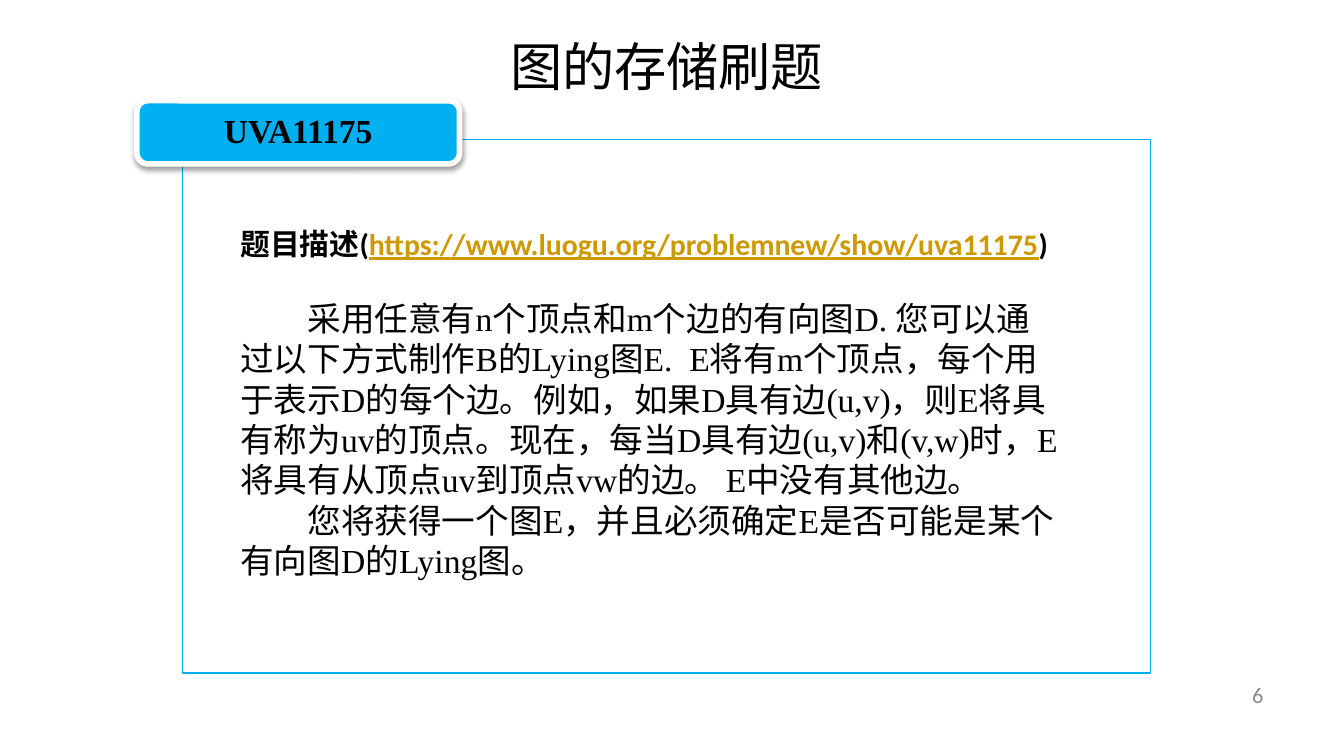
from pptx import Presentation
from pptx.dml.color import RGBColor
from pptx.enum.shapes import MSO_SHAPE as Shape
from pptx.enum.text import MSO_ANCHOR as Anchor, PP_ALIGN as Align
from pptx.oxml import parse_xml
from pptx.oxml.ns import nsdecls
from pptx.oxml.xmlchemy import OxmlElement
from pptx.util import Pt

COLORS = {"text": "000000", "panel": "FFFFFF", "accent": "00B0F0",
          "link": "CC9900", "number": "8C8C8C"}
LATIN, SERIF, CJK = "Calibri", "Times New Roman", "Noto Sans CJK SC"

GRAPH = ("采用任意有n个顶点和m个边的有向图D. 您可以通过以下方式制作B的Lying图E.  "
         "E将有m个顶点，每个用于表示D的每个边。例如，如果D具有边(u,v)，"
         "则E将具有称为uv的顶点。现在，每当D具有边(u,v)和(v,w)时，"
         "E将具有从顶点uv到顶点vw的边。 E中没有其他边。")
TASK = "您将获得一个图E，并且必须确定E是否可能是某个有向图D的Lying图。"


def rgb(name):
    return RGBColor.from_string(COLORS[name])


def set_values(target, values):
    for key, value in values.items():
        setattr(target, key, value)


def add_run(paragraph, text, color="text", **font_values):
    run = paragraph.add_run()
    run.text = text
    set_values(run.font, font_values)
    run.font.color.rgb = rgb(color)
    return run


def place(target, box):
    set_values(target, dict(zip(("left", "top", "width", "height"), map(Pt, box))))


def add_text_box(slide, box, **frame_values):
    frame = slide.shapes.add_textbox(*map(Pt, box)).text_frame
    set_values(frame, {"word_wrap": True, **frame_values})
    return frame


def add_panel_shape(slide, preset, box, fill, line, weight):
    shape = slide.shapes.add_shape(preset, *map(Pt, box))
    shape.shadow.inherit = False
    shape.fill.solid()
    shape.fill.fore_color.rgb = rgb(fill)
    shape.line.color.rgb = rgb(line)
    shape.line.width = Pt(weight)
    return shape


def add_title(slide, box):
    title = slide.shapes.title
    place(title, box)
    set_values(title.text_frame, {"word_wrap": True, "vertical_anchor": Anchor.TOP})
    paragraph = title.text_frame.paragraphs[0]
    set_values(paragraph, {"alignment": Align.CENTER, "line_spacing": 1.35})
    run = add_run(paragraph, "图的存储刷题", name=CJK, size=Pt(28))
    east_asian = OxmlElement("a:ea")
    east_asian.set("typeface", CJK)
    run.font._element.append(east_asian)


def add_problem_frame(slide, box):
    left, top, width, height = box
    # Outline, with a nearly opaque fill
    outline = add_panel_shape(slide, Shape.RECTANGLE, box, "panel", "accent", 0.75)
    alpha = OxmlElement("a:alpha")
    alpha.set("val", "90000")
    outline.fill._xPr.find(".//{*}srgbClr").append(alpha)

    # Tab with the problem number, over the top left corner
    tab = add_panel_shape(slide, Shape.ROUNDED_RECTANGLE,
                          (left - 24.5, top - 20.9, 172.8, 33.8),
                          "accent", "panel", 3)
    tab.adjustments[0] = 0.17
    effects = tab._element.spPr.find("{*}effectLst")
    effects.append(parse_xml(
        f'<a:outerShdw {nsdecls("a")} blurRad="{Pt(3.1)}" dist="{Pt(1.6)}" '
        'dir="5400000" rotWithShape="0"><a:srgbClr val="000000">'
        '<a:alpha val="38000"/></a:srgbClr></a:outerShdw>'))
    set_values(tab.text_frame, {
        "margin_left": Pt(17.3), "margin_right": Pt(17.3),
        "margin_top": Pt(4.3), "margin_bottom": Pt(4.3),
        "vertical_anchor": Anchor.MIDDLE, "word_wrap": True})
    paragraph = tab.text_frame.paragraphs[0]
    set_values(paragraph, {"alignment": Align.CENTER, "line_spacing": 0.9})
    add_run(paragraph, "UVA11175", name=SERIF, size=Pt(18), bold=True)


def add_description(slide, box):
    frame = add_text_box(slide, box)
    # Heading with the address of the problem
    heading = frame.paragraphs[0]
    bold = {"name": LATIN, "size": Pt(16), "bold": True}
    add_run(heading, "题目描述(", **bold)
    add_run(heading, "https://www.luogu.org/problemnew/show/uva11175",
            "link", underline=True, **bold)
    add_run(heading, ")", **bold)
    # Statement, with indented first lines
    for text, gap in ((GRAPH, 19.5), (TASK, 0)):
        paragraph = frame.add_paragraph()
        paragraph.space_before = Pt(gap)
        paragraph._p.get_or_add_pPr().set("indent", str(Pt(36)))
        add_run(paragraph, text, name=SERIF, size=Pt(18))


def add_slide_number(slide, box):
    frame = add_text_box(slide, box, vertical_anchor=Anchor.MIDDLE)
    paragraph = frame.paragraphs[0]
    paragraph.alignment = Align.RIGHT
    add_run(paragraph, "6", "number", name=LATIN, size=Pt(12))


def main():
    deck = Presentation()
    set_values(deck, {"slide_width": Pt(720), "slide_height": Pt(405)})
    slide = deck.slides.add_slide(deck.slide_layouts[5])
    add_title(slide, (238.3, 2.9, 237.6, 48.2))
    add_problem_frame(slide, (97.9, 74.9, 518.4, 285.8))
    add_description(slide, (121.7, 117.4, 452.9, 198.7))
    add_slide_number(slide, (516.2, 361.4, 167.8, 21.6))
    deck.save("out.pptx")


if __name__ == "__main__":
    main()
